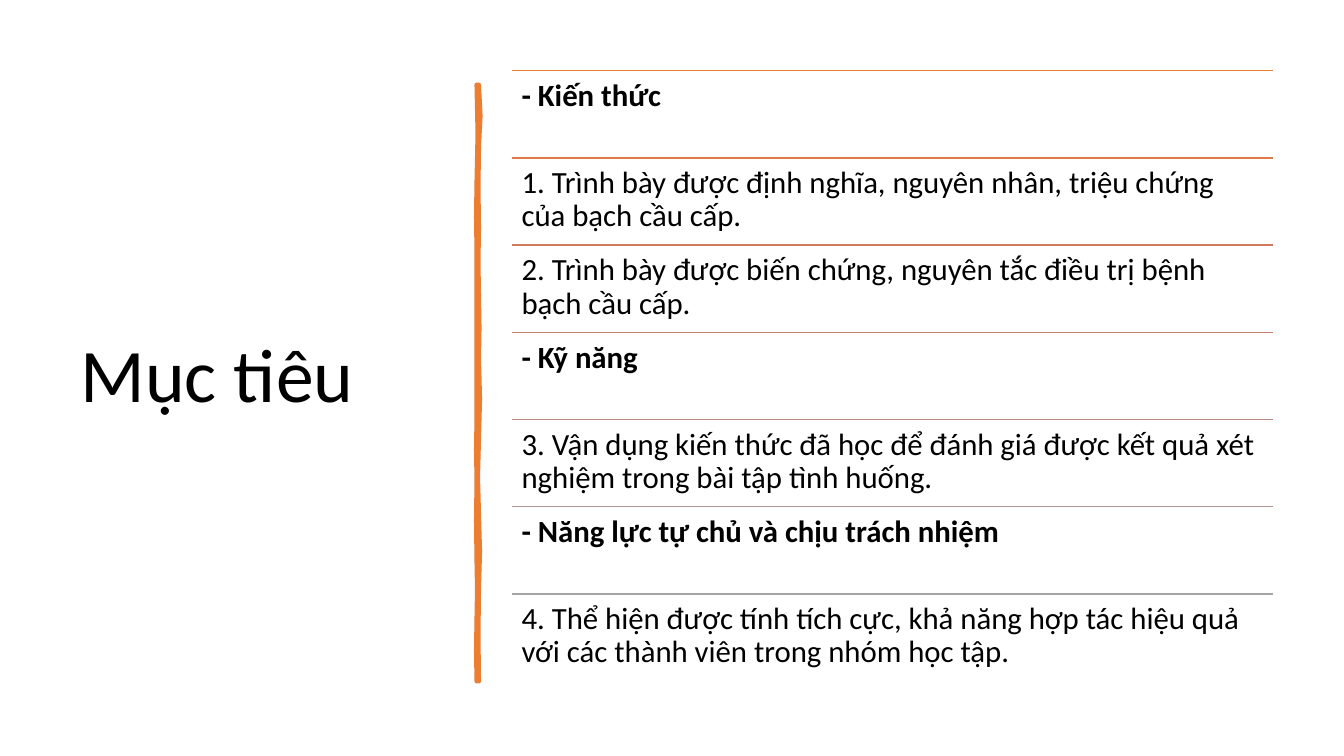
from dataclasses import dataclass

from lxml.etree import SubElement
from pptx import Presentation
from pptx.dml.color import RGBColor
from pptx.enum.shapes import MSO_CONNECTOR
from pptx.enum.text import MSO_ANCHOR
from pptx.oxml.ns import qn
from pptx.slide import Slide
from pptx.util import Emu, Inches, Pt

PAGE_WIDTH, PAGE_HEIGHT = Inches(13.33), Inches(7.5)
COLUMNS, ROWS = 160, 90
FONT = "Calibri"
COLOURS = {
    "text": "000000",
    "brush": "ED7D31",
    "rule 1": "ED7D31",
    "rule 2": "DE7A47",
    "rule 3": "D17B5C",
    "rule 4": "C48170",
    "rule 5": "B98A82",
    "rule 6": "AE9694",
    "rule 7": "A5A5A5",
}
LIST_LEFT, LIST_TOP, LIST_WIDTH, LIST_STEP = 61, 8.42, 90.6, 10.38
WOBBLE = 0.12


@dataclass(frozen=True)
class Objective:
    text: str
    heading: bool = False


@dataclass(frozen=True)
class TextStyle:
    size: float
    inset: float
    anchor: MSO_ANCHOR = MSO_ANCHOR.TOP
    bold: bool = False


@dataclass(frozen=True)
class BrushEdge:
    column: float
    rows: tuple[float, ...]
    bends: tuple[float, ...]


OBJECTIVES = (
    Objective("- Kiến thức", True),
    Objective("1. Trình bày được định nghĩa, nguyên nhân, triệu chứng của bạch cầu cấp."),
    Objective("2. Trình bày được biến chứng, nguyên tắc điều trị bệnh bạch cầu cấp."),
    Objective("- Kỹ năng", True),
    Objective("3. Vận dụng kiến thức đã học để đánh giá được kết quả xét nghiệm trong bài tập tình huống."),
    Objective("- Năng lực tự chủ và chịu trách nhiệm", True),
    Objective("4. Thể hiện được tính tích cực, khả năng hợp tác hiệu quả với các thành viên trong nhóm học tập."),
)
BRUSH_EDGES = (
    BrushEdge(
        57,
        (10.1, 17.5, 27.1, 35.3, 42.7, 52.3, 61.2, 70.1, 81.1),
        (1.5, -0.5, -0.5, 0.5, 1, -1, 1, -0.5),
    ),
    BrushEdge(
        56.76,
        (81.1, 73.6, 66.8, 57.2, 49.8, 40.2, 30, 21.7, 10.1),
        (-0.5, 0.5, -0.5, -0.5, 0, 0, -0.5, 1),
    ),
)


def across(columns: float) -> Emu:
    return Emu(round(PAGE_WIDTH * columns / COLUMNS))


def down(rows: float) -> Emu:
    return Emu(round(PAGE_HEIGHT * rows / ROWS))


def colour(name: str) -> RGBColor:
    return RGBColor.from_string(COLOURS[name])


def add_text(page: Slide, text: str, left: float, top: float, width: float,
             height: float, style: TextStyle) -> None:
    box = page.shapes.add_textbox(across(left), down(top), across(width), down(height))
    frame = box.text_frame
    frame.word_wrap = True
    frame.vertical_anchor = style.anchor
    frame.margin_left = frame.margin_right = across(style.inset)
    frame.margin_top = frame.margin_bottom = down(style.inset)
    frame.text = text
    para = frame.paragraphs[0]
    para.line_spacing = 0.9
    for span in para.runs:
        span.font.name = FONT
        span.font.size = Pt(style.size)
        span.font.bold = style.bold
        span.font.color.rgb = colour("text")


def add_rule(page: Slide, row: float, colour_name: str) -> None:
    rule = page.shapes.add_connector(
        MSO_CONNECTOR.STRAIGHT,
        across(LIST_LEFT), down(row), across(LIST_LEFT + LIST_WIDTH), down(row),
    )
    rule.line.color.rgb = colour(colour_name)
    rule.line.width = Pt(1)
    SubElement(rule._element.spPr, qn("a:effectLst"))


def edge_points(edge: BrushEdge) -> list[tuple[Emu, Emu]]:
    points = [(across(edge.column), down(edge.rows[0]))]
    for start, end, bend in zip(edge.rows, edge.rows[1:], edge.bends):
        points.append((across(edge.column + WOBBLE * bend), down((start + end) / 2)))
        points.append((across(edge.column), down(end)))
    return points


def add_brush(page: Slide) -> None:
    points = [point for edge in BRUSH_EDGES for point in edge_points(edge)]
    builder = page.shapes.build_freeform(*points[0])
    builder.add_line_segments(points[1:], close=True)
    brush = builder.convert_to_shape()
    brush.shadow.inherit = False
    brush.fill.solid()
    brush.fill.fore_color.rgb = colour("brush")
    brush.line.color.rgb = colour("brush")
    brush.line.width = Pt(3.25)


def add_objectives(page: Slide) -> None:
    for index, objective in enumerate(OBJECTIVES):
        row = LIST_TOP + index * LIST_STEP
        add_rule(page, row, f"rule {index + 1}")
        style = TextStyle(size=22, inset=1.1, bold=objective.heading)
        add_text(page, objective.text, LIST_LEFT, row, LIST_WIDTH, LIST_STEP, style)


def main() -> None:
    deck = Presentation()
    deck.slide_width, deck.slide_height = PAGE_WIDTH, PAGE_HEIGHT
    page = deck.slides.add_slide(deck.slide_layouts[6])
    title_style = TextStyle(size=54, inset=1.2, anchor=MSO_ANCHOR.MIDDLE)
    add_text(page, "Mục tiêu", 8.4, 8.4, 44.9, 73.3, title_style)
    add_brush(page)
    add_objectives(page)
    deck.save("out.pptx")


if __name__ == "__main__":
    main()
